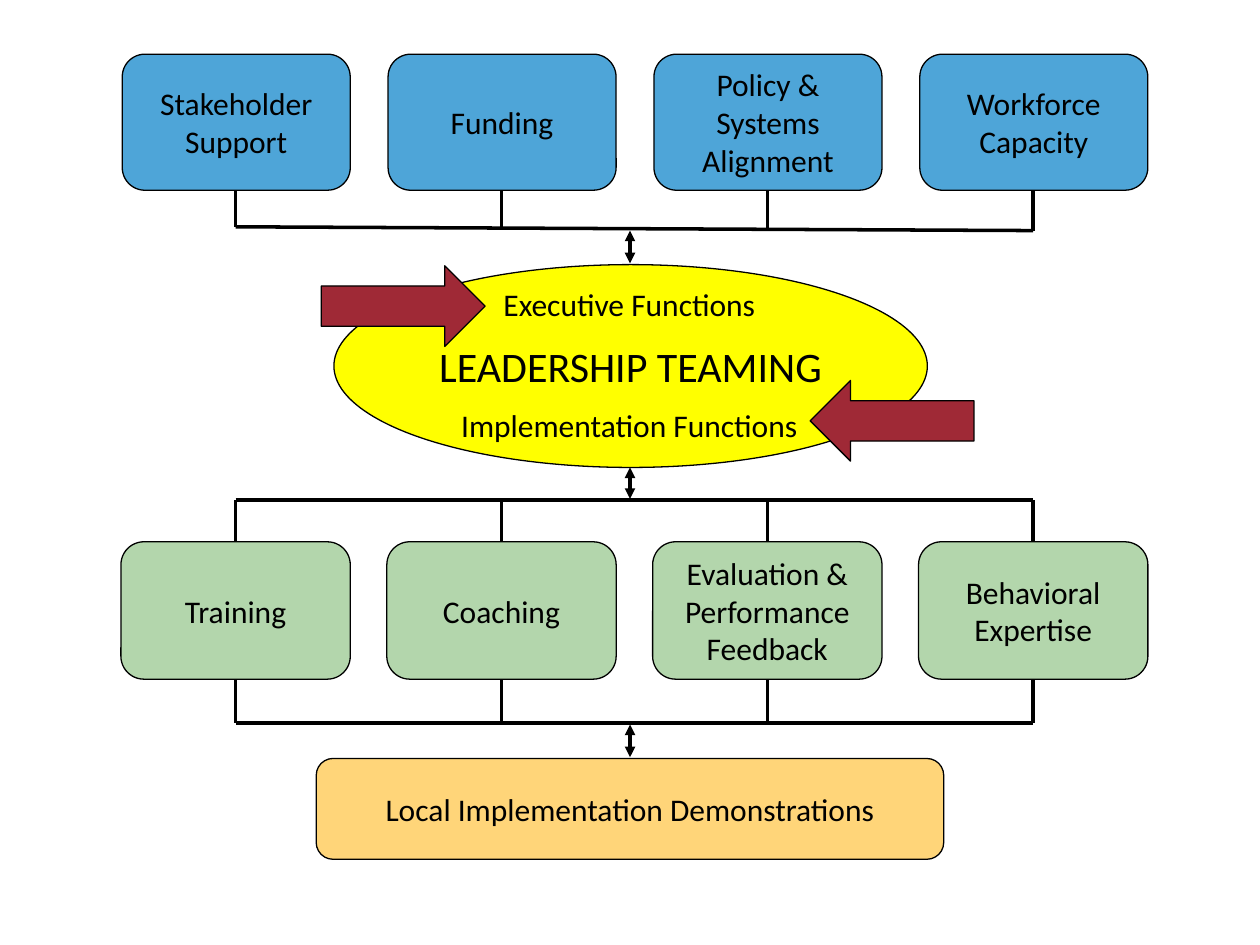
from lxml import etree
from pptx import Presentation
from pptx import util as u
from pptx.dml.color import RGBColor
from pptx.enum import shapes, text
from pptx.oxml import ns

COLORS = {"driver": "4EA5D8", "team": "FFFF00", "practice": "B3D6AC",
          "local": "FFD579", "arrow": "9F2936", "ink": "000000"}
SHAPE = shapes.MSO_SHAPE
DRIVERS = ["Stakeholder Support", "Funding", "Policy & Systems Alignment", "Workforce Capacity"]
PRACTICES = ["Training", "Coaching", "Evaluation & Performance Feedback", "Behavioral Expertise"]
PITCH = 2.11
CENTER = 5


def add_node(slide, kind, box, color=None, label="", size=18):
    """Add a shape with an optional fill, outline and centred label."""
    node = slide.shapes.add_shape(kind, *map(u.Inches, box))
    node.shadow.inherit = False
    if color:
        node.fill.solid()
        node.fill.fore_color.rgb = RGBColor.from_string(COLORS[color])
        node.line.color.rgb = RGBColor.from_string(COLORS["ink"])
        node.line.width = u.Pt(0.75)
    else:
        node.fill.background()
        node.line.fill.background()
    if label:
        frame = node.text_frame
        frame.text = label
        frame.word_wrap = True
        frame.vertical_anchor = text.MSO_ANCHOR.MIDDLE
        paragraph = frame.paragraphs[0]
        paragraph.alignment = text.PP_ALIGN.CENTER
        paragraph.font.name = "Calibri"
        paragraph.font.size = u.Pt(size)
        paragraph.font.color.rgb = RGBColor.from_string(COLORS["ink"])
    return node


def add_link(slide, start, end, two_way=False):
    """Draw a straight black line, with arrowheads at both ends if two-way."""
    link = slide.shapes.add_connector(shapes.MSO_CONNECTOR.STRAIGHT,
                                      *map(u.Inches, (*start, *end)))
    link.line.color.rgb = RGBColor.from_string(COLORS["ink"])
    link.line.width = u.Pt(2)
    if two_way:
        outline = link.line._get_or_add_ln()
        for tip in ("a:headEnd", "a:tailEnd"):
            etree.SubElement(outline, ns.qn(tip), type="triangle")
    etree.SubElement(link._element.spPr, ns.qn("a:effectLst"))


def add_row(slide, box, labels, color):
    """Place a row of equally spaced rounded boxes, the first at the given box."""
    left, top, width, height = box
    for column, label in enumerate(labels):
        add_node(slide, SHAPE.ROUNDED_RECTANGLE,
                 (left + column * PITCH, top, width, height), color, label)


def add_bus(slide, edge, bus_start, bus_end):
    """Join four box edges to a horizontal bus that may tilt slightly."""
    first = 1.87
    add_link(slide, (first, bus_start), (first + 3 * PITCH, bus_end))
    for column in range(4):
        x = first + column * PITCH
        add_link(slide, (x, edge), (x, bus_start + (bus_end - bus_start) * column / 3))


def add_team(slide, box):
    """Place the leadership ellipse with its two functions and their arrows."""
    left, top, width, height = box
    add_node(slide, SHAPE.OVAL, box, "team", "LEADERSHIP TEAMING", 24)
    for label, offset in (("Executive Functions", -0.02), ("Implementation Functions", 0.94)):
        add_node(slide, SHAPE.OVAL, (left + 0.27, top + offset, 4.15, 0.67), label=label)
    add_node(slide, SHAPE.RIGHT_ARROW, (left - 0.1, top + 0.01, 1.3, 0.64), "arrow")
    implementation_arrow = add_node(slide, SHAPE.RIGHT_ARROW,
                                    (left + 3.78, top + 0.92, 1.3, 0.64), "arrow")
    implementation_arrow.rotation = 180


def main():
    """Build the leadership teaming diagram."""
    deck = Presentation()
    deck.slide_width, deck.slide_height = u.Inches(10), u.Inches(7.5)
    slide = deck.slides.add_slide(deck.slide_layouts[6])
    add_row(slide, (0.97, 0.43, 1.81, 1.08), DRIVERS, "driver")
    add_bus(slide, 1.51, 1.8, 1.83)
    add_team(slide, (2.65, 2.1, 4.71, 1.61))
    add_row(slide, (0.96, 4.3, 1.82, 1.09), PRACTICES, "practice")
    add_bus(slide, 4.3, 3.97, 3.97)
    add_bus(slide, 5.39, 5.74, 5.74)
    add_node(slide, SHAPE.ROUNDED_RECTANGLE, (2.51, 6.02, 4.98, 0.8), "local",
             "Local Implementation Demonstrations")
    for top, bottom in ((1.83, 2.09), (3.71, 3.96), (5.75, 6.01)):
        add_link(slide, (CENTER, top), (CENTER, bottom), two_way=True)
    deck.save("out.pptx")


if __name__ == "__main__":
    main()
